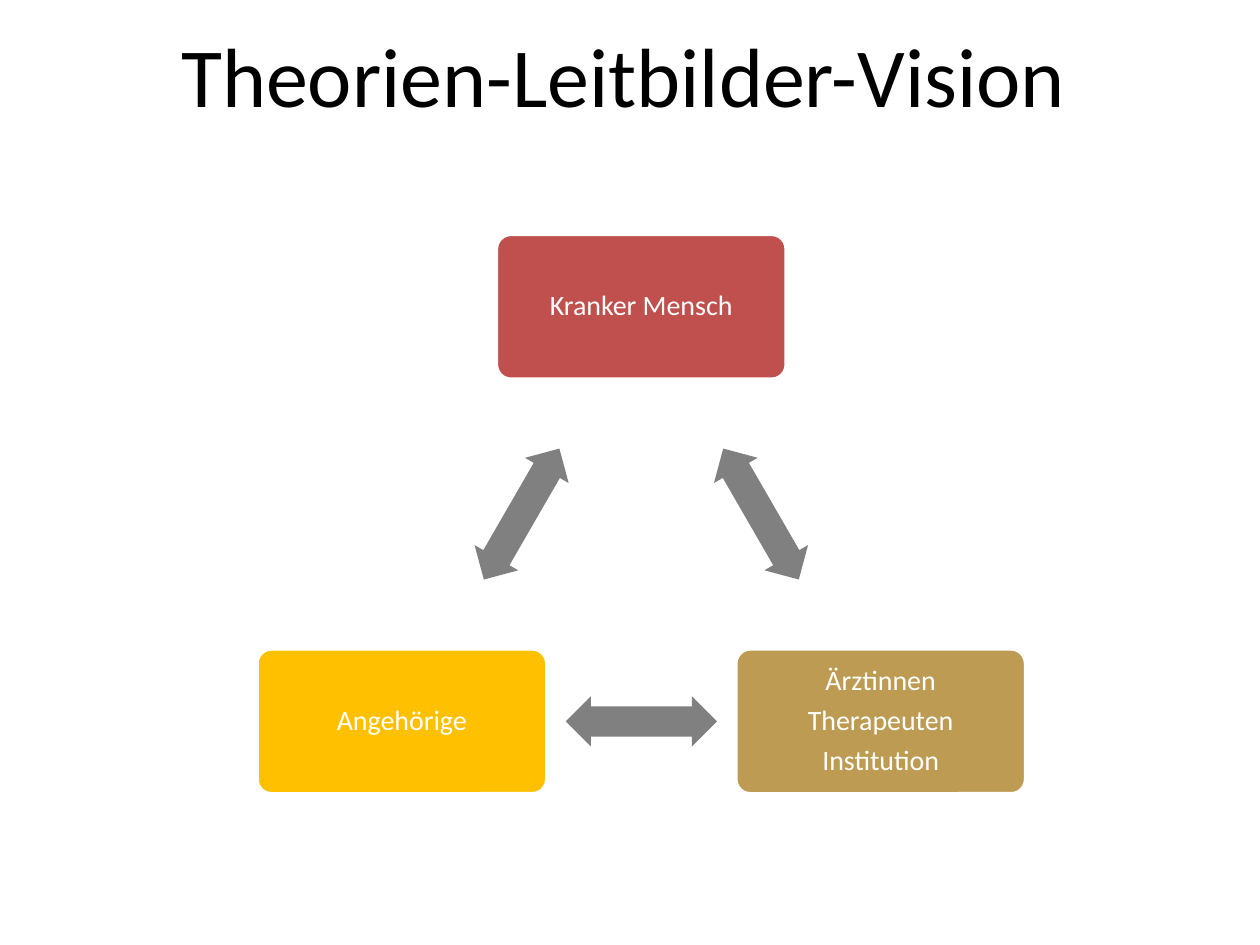
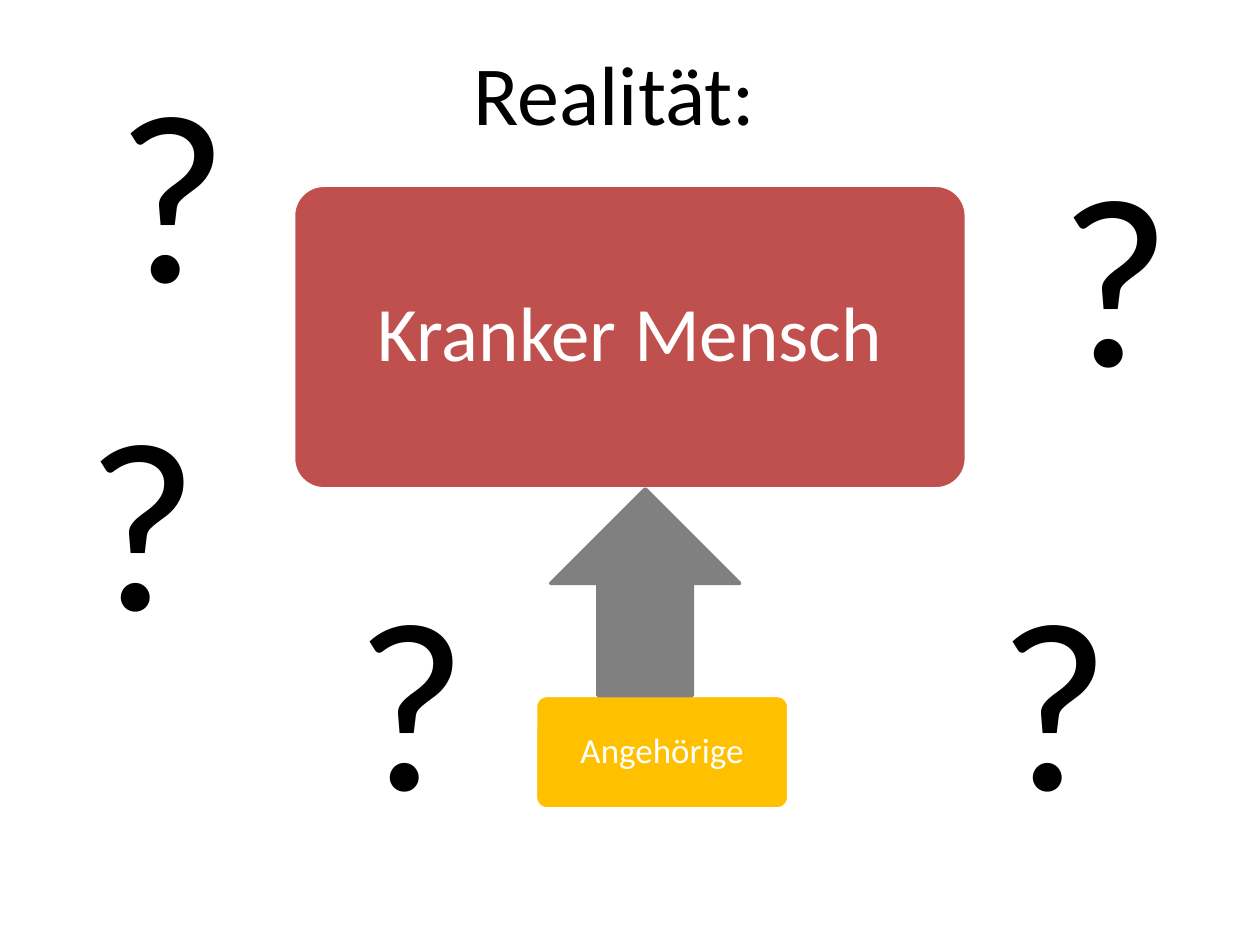
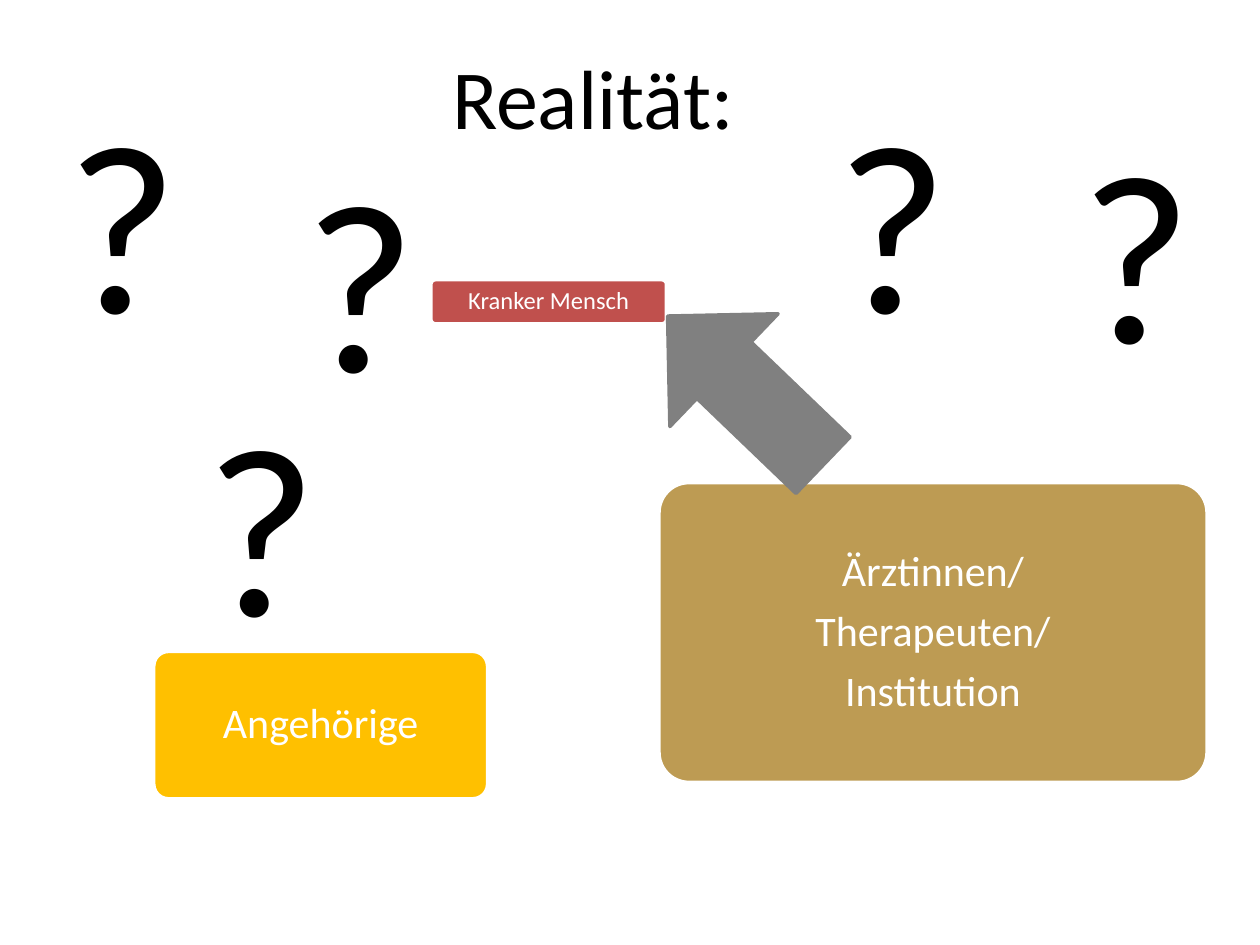
from math import atan2, degrees

from pptx import Presentation
from pptx.dml.color import RGBColor
from pptx.enum.shapes import MSO_SHAPE as Preset
from pptx.enum.text import MSO_ANCHOR as Anchor, MSO_AUTO_SIZE as AutoSize, PP_ALIGN as Align
from pptx.util import Inches, Pt

# Shared colours and font
WHITE = RGBColor(0xFF, 0xFF, 0xFF)
BLACK = RGBColor(0x00, 0x00, 0x00)
RED = RGBColor(0xC0, 0x50, 0x4D)
YELLOW = RGBColor(0xFF, 0xC0, 0x00)
OCHRE = RGBColor(0xBD, 0x9B, 0x53)
GREY = RGBColor(0x80, 0x80, 0x80)
FONT = "Calibri"

# The three parties: text lines and colour
PATIENT = (["Kranker Mensch"], RED)
RELATIVES = (["Angehörige"], YELLOW)
STAFF = (["Ärztinnen", "Therapeuten", "Institution"], OCHRE)
STAFF_SLASHED = (["Ärztinnen/", "Therapeuten/", "Institution"], OCHRE)


def set_all(target, values):
    for name, value in values.items():
        setattr(target, name, value)


class Deck:
    """Holds the style and the slide being built."""

    def __init__(self):
        self.prs = Presentation()
        set_all(self.prs, {"slide_width": Inches(10), "slide_height": Inches(7.5)})
        self.slide = None

    def new_slide(self):
        self.slide = self.prs.slides.add_slide(self.prs.slide_layouts[6])

    def add_text(self, paragraph, text, size, color):
        run = paragraph.add_run()
        run.text = text
        set_all(run.font, {"name": FONT, "size": Pt(size)})
        run.font.color.rgb = color

    def label(self, text, box, size):
        """Black text on one line that does not wrap."""
        frame = self.slide.shapes.add_textbox(*map(Inches, box)).text_frame
        set_all(frame, {"word_wrap": False, "auto_size": AutoSize.SHAPE_TO_FIT_TEXT})
        self.add_text(frame.paragraphs[0], text, size, BLACK)

    def title(self, text, left, top, width):
        self.label(text, (left, top, width, 0.91), 48)

    def question_marks(self, places):
        for left, top in places:
            self.label("?", (left, top, 1.1, 2.42), 138)

    def shape(self, preset, box, fill, line=None, rotation=0, adjustments=()):
        shape = self.slide.shapes.add_shape(preset, *map(Inches, box))
        shape.shadow.inherit = False
        shape.rotation = rotation
        for index, value in enumerate(adjustments):
            shape.adjustments[index] = value
        shape.fill.solid()
        shape.fill.fore_color.rgb = fill
        if line is None:
            shape.line.fill.background()
        else:
            shape.line.color.rgb = line
            shape.line.width = Pt(2)
        return shape

    def party(self, party, box, size, inset=0.1):
        """Rounded box with centred white lines."""
        lines, fill = party
        frame = self.shape(Preset.ROUNDED_RECTANGLE, box, fill, WHITE,
                           adjustments=[0.1]).text_frame
        sides = ("left", "top", "right", "bottom")
        set_all(frame, {f"margin_{side}": Inches(inset) for side in sides})
        set_all(frame, {"word_wrap": True, "vertical_anchor": Anchor.MIDDLE})
        for index, text in enumerate(lines):
            paragraph = frame.add_paragraph() if index else frame.paragraphs[0]
            set_all(paragraph, {"alignment": Align.CENTER, "line_spacing": 0.9,
                                "space_after": Pt(0.35 * size)})
            self.add_text(paragraph, text, size, WHITE)

    def double_arrow(self, start, end, length=1.2, height=0.4):
        """Two-headed arrow centred between two points."""
        (x1, y1), (x2, y2) = start, end
        box = ((x1 + x2 - length) / 2, (y1 + y2 - height) / 2, length, height)
        self.shape(Preset.LEFT_RIGHT_ARROW, box, GREY, adjustments=[0.6, 0.5],
                   rotation=degrees(atan2(y2 - y1, x2 - x1)))

    def block_arrow(self, preset, box, rotation):
        self.shape(preset, box, GREY, GREY, rotation)


def theory(deck):
    deck.new_slide()
    width, height = 2.3, 1.15
    corners = [(3.94, 1.86), (5.84, 5.15), (2.04, 5.15)]
    centres = [(x + width / 2, y + height / 2) for x, y in corners]
    for party, corner in zip((PATIENT, STAFF, RELATIVES), corners):
        deck.party(party, (*corner, width, height), 16)
    for start, end in zip(centres, centres[1:] + centres[:1]):
        deck.double_arrow(start, end)
    deck.title("Theorien-Leitbilder-Vision", 1.34, 0.14, 7.31)


def reality_of_relatives(deck):
    deck.new_slide()
    deck.party(PATIENT, (2.33, 1.47, 5.34, 2.41), 44, inset=0.25)
    deck.party(RELATIVES, (4.25, 5.52, 2.01, 0.9), 20)
    deck.block_arrow(Preset.DOWN_ARROW, (4.37, 3.88, 1.5, 1.64), 180)
    deck.question_marks([(2.72, 4.31), (7.83, 4.31), (0.59, 2.88), (8.31, 0.94), (0.83, 0.28)])
    deck.title("Realität:", 3.66, 0.28, 2.46)


def reality_of_staff(deck):
    deck.new_slide()
    deck.party(PATIENT, (3.42, 2.22, 1.87, 0.35), 14, inset=0.13)
    deck.party(STAFF_SLASHED, (5.23, 3.83, 4.35, 2.38), 24, inset=0.13)
    deck.party(RELATIVES, (1.22, 5.17, 2.65, 1.17), 24, inset=0.13)
    deck.block_arrow(Preset.RIGHT_ARROW, (5.06, 2.48, 1.71, 1.24), 223.8)
    deck.question_marks([(2.32, 0.99), (1.53, 2.93), (8.48, 0.76), (0.43, 0.52), (6.54, 0.52)])
    deck.title("Realität:", 3.49, 0.31, 2.46)


def main():
    deck = Deck()
    for build in (theory, reality_of_relatives, reality_of_staff):
        build(deck)
    deck.prs.save("out.pptx")


if __name__ == "__main__":
    main()
